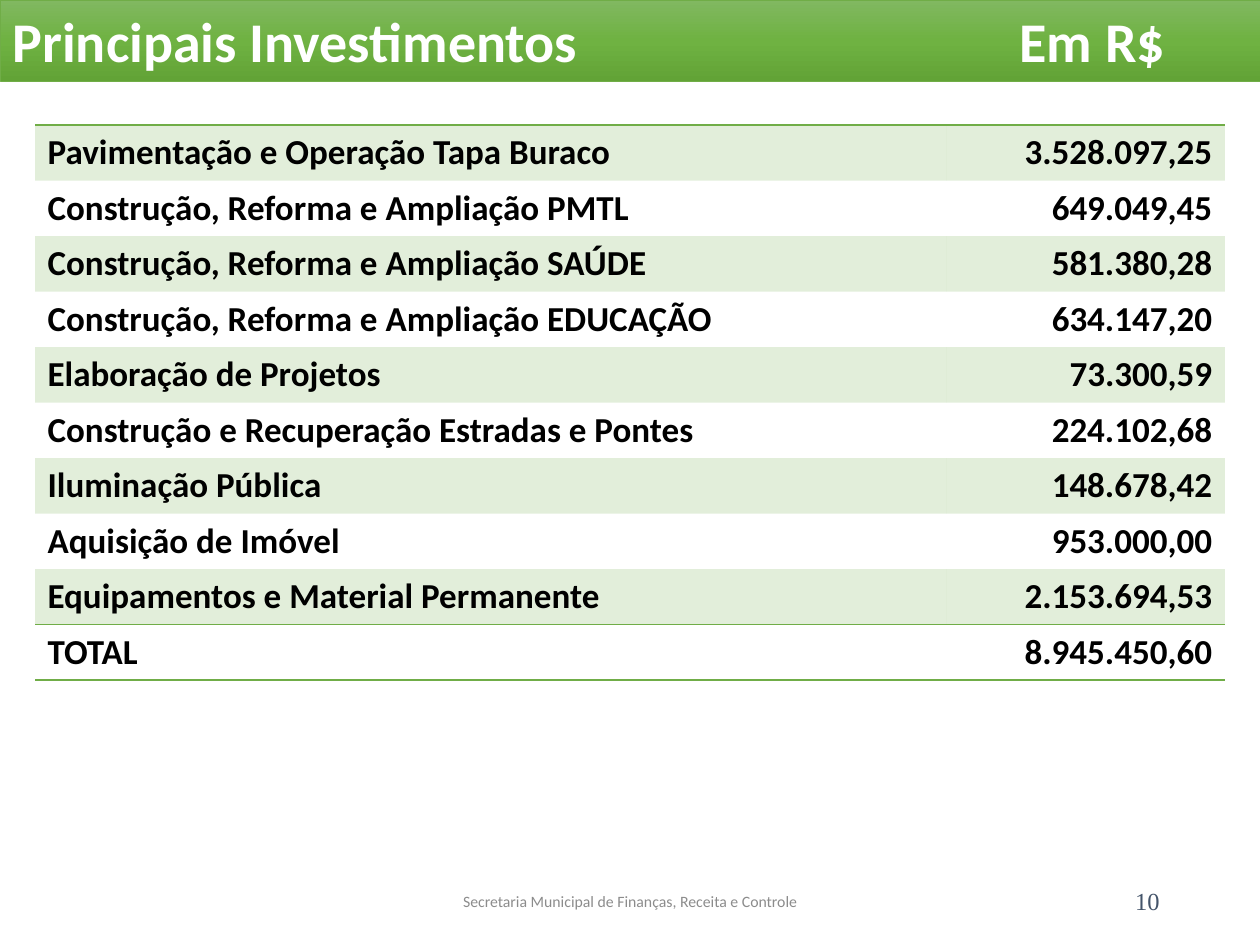
import copy

import pptx
import pptx.dml.color
import pptx.enum.text
import pptx.oxml
import pptx.oxml.ns
import pptx.util

# Content
TITLE = "Principais Investimentos\tEm R$"
INVESTMENTS = [
    ("Pavimentação e Operação Tapa Buraco", "3.528.097,25"),
    ("Construção, Reforma e Ampliação PMTL", "649.049,45"),
    ("Construção, Reforma e Ampliação SAÚDE", "581.380,28"),
    ("Construção, Reforma e Ampliação EDUCAÇÃO", "634.147,20"),
    ("Elaboração de Projetos", "73.300,59"),
    ("Construção e Recuperação Estradas e Pontes", "224.102,68"),
    ("Iluminação Pública", "148.678,42"),
    ("Aquisição de Imóvel", "953.000,00"),
    ("Equipamentos e Material Permanente", "2.153.694,53"),
    ("TOTAL", "8.945.450,60"),
]
FOOTER = "Secretaria Municipal de Finanças, Receita e Controle"
PAGE_NUMBER = "10"


class Theme:
    font, number_font = "Calibri", "Times New Roman"
    white, black, gray, slate = "FFFFFF", "000000", "8C8C8C", "44546A"
    green = "70AD47"
    gradient = [(0, "81B861"), (0.5, "6FB242"), (1, "62A336")]
    title_size, table_size, number_size, footer_size = 32, 20, 14, 9


# Layout in px
EMU_PER_PX = pptx.util.Inches(1) / 126
SLIDE_SIZE = (1260, 945)
TITLE_BOX = (0, 0, 1260, 81)
TITLE_TAB = 1007
TABLE_BOX = (35, 125, 1190, 547)
COLUMN_WIDTHS = (912, 278)
FOOTER_BOX = (417, 876, 426, 50)
NUMBER_BOX = (888, 876, 284, 50)
BAND_ALPHA = 20000
PLAIN_TABLE_STYLE = "{2D5ABB26-0587-4C30-8999-92F81FD0307C}"
ALIGN = pptx.enum.text.PP_ALIGN
MIDDLE = pptx.enum.text.MSO_ANCHOR.MIDDLE


def px(length):
    return pptx.util.Emu(round(length * EMU_PER_PX))


def rgb(color):
    return pptx.dml.color.RGBColor.from_string(color)


def add_element(parent, xml):
    namespace = pptx.oxml.ns.nsdecls("a")
    parent.append(pptx.oxml.parse_xml(xml.replace(" ", f" {namespace} ", 1)))


def write_text(frame, text, size, color, font=Theme.font, bold=False,
               align=ALIGN.LEFT, tab=None):
    frame.word_wrap = True
    frame.text = text
    paragraph = frame.paragraphs[0]
    paragraph.alignment = align
    if tab is not None:
        add_element(paragraph._p.get_or_add_pPr(),
                    f'<a:tabLst ><a:tab pos="{px(tab)}" algn="l"/></a:tabLst>')
    for run in paragraph.runs:
        run.font.name = font
        run.font.size = pptx.util.Pt(size)
        run.font.bold = bold
        run.font.color.rgb = rgb(color)


def add_title(slide):
    title = slide.shapes.title
    title.left, title.top, title.width, title.height = map(px, TITLE_BOX)
    title.fill.gradient()
    title.fill.gradient_angle = 270
    stop_list = title._element.spPr.find(".//" + pptx.oxml.ns.qn("a:gsLst"))
    stop_list.append(copy.deepcopy(stop_list[0]))
    for stop, (position, color) in zip(title.fill.gradient_stops, Theme.gradient):
        stop.position = position
        stop.color.rgb = rgb(color)
    title.line.color.rgb = rgb(Theme.green)
    title.line.width = pptx.util.Pt(0.5)
    write_text(title.text_frame, TITLE, Theme.title_size, Theme.white,
               bold=True, tab=TITLE_TAB)
    title.text_frame.auto_size = pptx.enum.text.MSO_AUTO_SIZE.NONE
    title.text_frame.vertical_anchor = MIDDLE


def add_border(cell, side):
    add_element(cell._tc.get_or_add_tcPr(),
                f'<a:{side} w="{pptx.util.Pt(1)}"><a:solidFill>'
                f'<a:srgbClr val="{Theme.green}"/></a:solidFill></a:{side}>')


def add_investment_table(slide):
    row_count = len(INVESTMENTS)
    frame = slide.shapes.add_table(row_count, 2, *map(px, TABLE_BOX))
    table = frame.table
    table.first_row = table.horz_banding = False
    table._tbl.tblPr.find(pptx.oxml.ns.qn("a:tableStyleId")).text = PLAIN_TABLE_STYLE
    for column, width in zip(table.columns, COLUMN_WIDTHS):
        column.width = px(width)
    for index, values in enumerate(INVESTMENTS):
        is_total = index == row_count - 1
        table.rows[index].height = px(TABLE_BOX[3] / row_count)
        for cell, text, align in zip(table.rows[index].cells, values,
                                     (ALIGN.LEFT, ALIGN.RIGHT)):
            write_text(cell.text_frame, text, Theme.table_size, Theme.black,
                       bold=True, align=align)
            # Rules above the first row and around the total
            if index == 0 or is_total:
                add_border(cell, "lnT")
            if is_total:
                add_border(cell, "lnB")
            # Tinted alternate rows
            if index % 2 == 0:
                cell.fill.solid()
                cell.fill.fore_color.rgb = rgb(Theme.green)
                color = cell._tc.tcPr.find(
                    pptx.oxml.ns.qn("a:solidFill") + "/" + pptx.oxml.ns.qn("a:srgbClr"))
                add_element(color, f'<a:alpha val="{BAND_ALPHA}"/>')
            else:
                cell.fill.background()


def add_label(slide, box, text, **text_format):
    label = slide.shapes.add_textbox(*map(px, box))
    write_text(label.text_frame, text, **text_format)
    label.text_frame.vertical_anchor = MIDDLE


def main():
    presentation = pptx.Presentation()
    presentation.slide_width, presentation.slide_height = map(px, SLIDE_SIZE)
    slide = presentation.slides.add_slide(presentation.slide_layouts[5])
    add_title(slide)
    add_investment_table(slide)
    add_label(slide, FOOTER_BOX, FOOTER, size=Theme.footer_size,
              color=Theme.gray, align=ALIGN.CENTER)
    add_label(slide, NUMBER_BOX, PAGE_NUMBER, size=Theme.number_size,
              color=Theme.slate, font=Theme.number_font, align=ALIGN.RIGHT)
    presentation.save("out.pptx")


if __name__ == "__main__":
    main()
